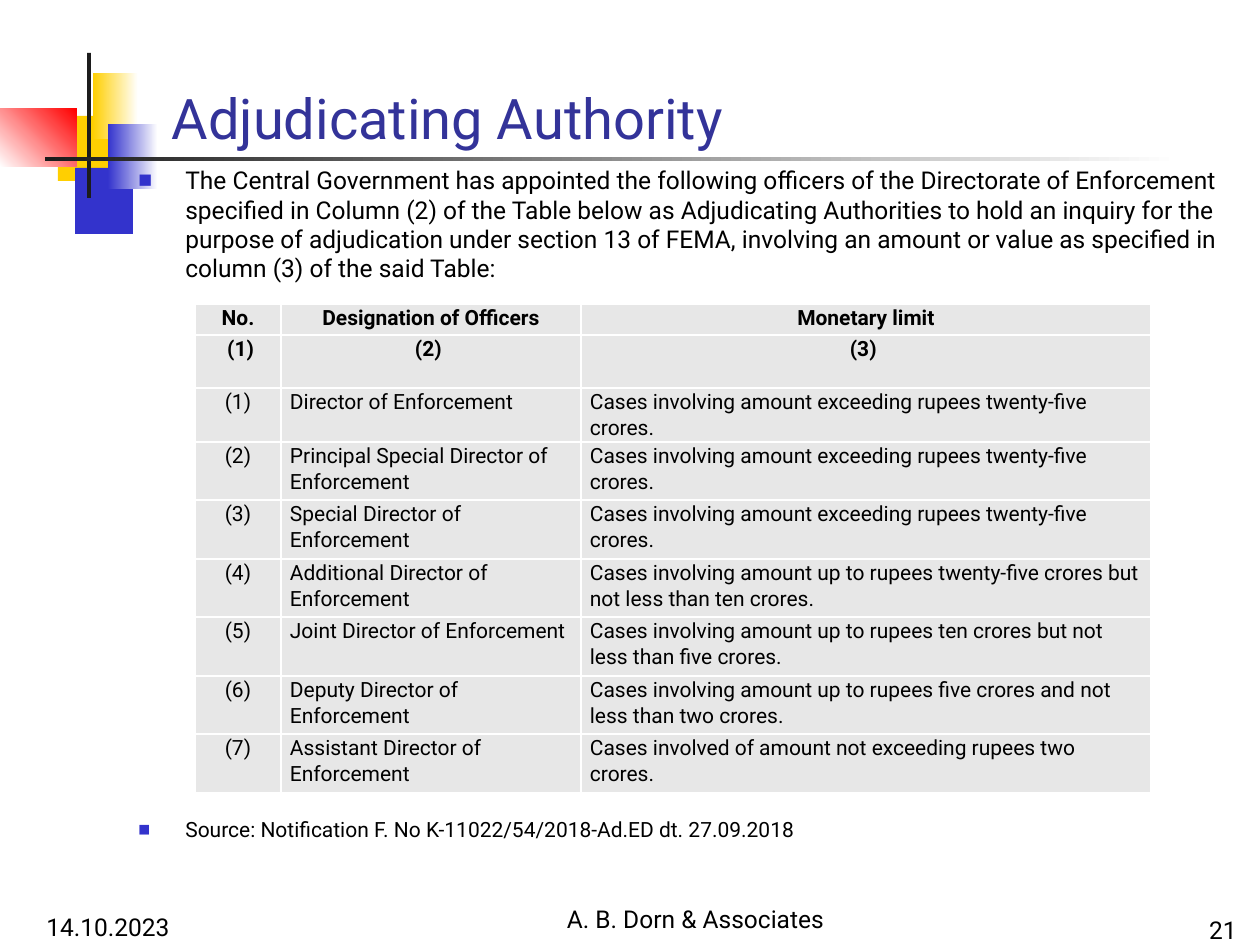
"""Build a slide on the adjudicating authorities and their monetary limits."""
from lxml import etree
from pptx import Presentation
from pptx.dml.color import RGBColor
from pptx.enum.shapes import MSO_SHAPE
from pptx.enum.text import MSO_ANCHOR, PP_ALIGN
from pptx.oxml import parse_xml
from pptx.oxml.ns import nsdecls, qn
from pptx.util import Pt

PX = 914400 / 126
RECT = MSO_SHAPE.RECTANGLE
TOP, LOW = MSO_ANCHOR.TOP, MSO_ANCHOR.BOTTOM
LEFT, MID, RIGHT = PP_ALIGN.LEFT, PP_ALIGN.CENTER, PP_ALIGN.RIGHT
GOLD, BLUE, RED, INK, WHITE = "FFCF01", "3333CC", "FF0000", "1C1C1C", "FFFFFF"


def scale(*nums):
    return [round(n * PX) for n in nums]


def write(frame, text, size, align=LEFT, hue="000000", bold=False):
    frame.text = text
    para = frame.paragraphs[0]
    para.alignment = align
    font = para.runs[0].font
    look = {"name": "Roboto", "size": Pt(size), "bold": bold}
    for key, value in look.items():
        setattr(font, key, value)
    font.color.rgb = RGBColor.from_string(hue)
    return para


deck = Presentation()
deck.slide_width, deck.slide_height = scale(1260, 945)
slide = deck.slides.add_slide(deck.slide_layouts[5])
shapes = slide.shapes

blocks = [
    ((58, 116, 60, 65), [GOLD], 0),
    ((75, 168, 58, 66), [BLUE], 0),
    ((93, 73, 45, 66), [GOLD, WHITE], 0),
    ((108, 124, 50, 65), [BLUE, WHITE], 0),
    ((0, 109, 77, 58), [WHITE, RED], 45),
    ((87, 53, 4, 145), [INK], 0),
    ((45, 157, 1134, 4), [INK, WHITE], 0),
]
for place, hues, angle in blocks:
    block = shapes.add_shape(RECT, *scale(*place))
    block.shadow.inherit = False
    block.line.fill.background()
    if len(hues) == 1:
        block.fill.solid()
        block.fill.fore_color.rgb = RGBColor.from_string(hues[0])
    else:
        block.fill.gradient()
        block.fill.gradient_angle = angle
        for stop, hue in zip(block.fill.gradient_stops, hues):
            stop.color.rgb = RGBColor.from_string(hue)

title = shapes.title
title.left, title.top, title.width, title.height = scale(159, 29, 1074, 128)
write(title.text_frame, "Adjudicating Authority", 32, hue="333399")
title.text_frame.vertical_anchor = LOW

intro = (
    "The Central Government has appointed the following officers of the "
    "Directorate of Enforcement specified in Column (2) of the Table below as "
    "Adjudicating Authorities to hold an inquiry for the purpose of adjudication "
    "under section 13 of FEMA, involving an amount or value as specified in "
    "column (3) of the said Table:"
)
source = "Source: Notification F. No K-11022/54/2018-Ad.ED dt. 27.09.2018"
notes = [
    ((126, 159, 1106, 134), intro, 14, LEFT, TOP, True),
    ((126, 810, 1106, 40), source, 12, LEFT, TOP, True),
    ((34, 885, 262, 63), "14.10.2023", 14, LEFT, LOW, False),
    ((496, 877, 399, 63), "A. B. Dorn & Associates", 14, MID, LOW, False),
    ((987, 888, 262, 63), "21", 14, RIGHT, LOW, False),
]
for place, text, size, align, anchor, listed in notes:
    frame = shapes.add_textbox(*scale(*place)).text_frame
    frame.word_wrap = True
    frame.vertical_anchor = anchor
    para = write(frame, text, size, align)
    if listed:
        props = para._p.get_or_add_pPr()
        dent = scale(47)[0]
        props.set("marL", str(dent))
        props.set("indent", str(-dent))
        hue = etree.SubElement(props, qn("a:buClr"))
        etree.SubElement(hue, qn("a:srgbClr"), val=BLUE)
        etree.SubElement(props, qn("a:buSzPct"), val="60000")
        etree.SubElement(props, qn("a:buFont"), typeface="Roboto")
        etree.SubElement(props, qn("a:buChar"), char="■")

over = "Cases involving amount exceeding rupees twenty-five crores."
upto = "Cases involving amount up to rupees "
ranks = [
    ("Director", over),
    ("Principal Special Director", over),
    ("Special Director", over),
    ("Additional Director", upto + "twenty-five crores but not less than ten crores."),
    ("Joint Director", upto + "ten crores but not less than five crores."),
    ("Deputy Director", upto + "five crores and not less than two crores."),
    ("Assistant Director", "Cases involved of amount not exceeding rupees two crores."),
]
rows = [("No.", "Designation of Officers", "Monetary limit"), (" (1)", "(2) ", "(3) ")]
for num, (rank, limit) in enumerate(ranks, 1):
    rows.append((f"({num})", f"{rank} of Enforcement", limit))
wide = [86, 300, 570]
tall = [31, 53, 52] + [58, 59] * 3

table = shapes.add_table(
    len(rows), len(wide), *scale(195, 304, sum(wide), sum(tall))
).table
table.first_row = table.horz_banding = False
for col, size in zip(table.columns, scale(*wide)):
    col.width = size
for row, size in zip(table.rows, scale(*tall)):
    row.height = size

side, none = scale(9, 0)
inset = {
    "margin_left": side, "margin_right": side,
    "margin_top": none, "margin_bottom": none,
}
for r, row in enumerate(rows):
    for c, text in enumerate(row):
        cell = table.cell(r, c)
        for key, value in inset.items():
            setattr(cell, key, value)
        cell.fill.solid()
        cell.fill.fore_color.rgb = RGBColor.from_string("E7E7E7")
        head = r < 2
        align = MID if head or c == 0 else LEFT
        para = write(cell.text_frame, text, 12, align, bold=head)
        para.line_spacing = 1.07
        props = cell._tc.get_or_add_tcPr()
        for spot, edge in enumerate("LRTB"):
            props.insert(spot, parse_xml(
                f'<a:ln{edge} {nsdecls("a")} w="12700"><a:solidFill>'
                f'<a:srgbClr val="{WHITE}"/></a:solidFill></a:ln{edge}>'
            ))

deck.save("out.pptx")
